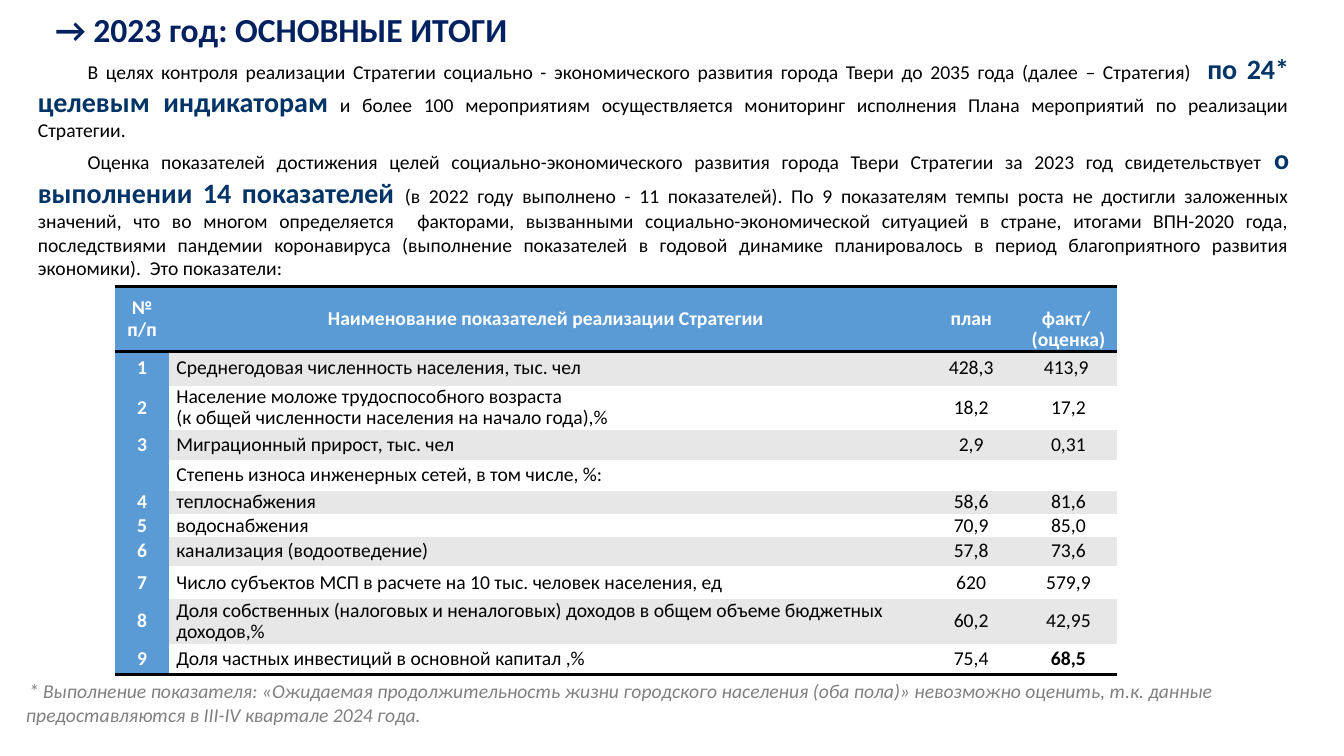
from lxml.etree import SubElement
from pptx import Presentation
from pptx.dml.color import RGBColor
from pptx.enum.text import MSO_ANCHOR, MSO_AUTO_SIZE, PP_ALIGN
from pptx.oxml.ns import qn
from pptx.util import Pt

BLACK = RGBColor(0, 0, 0)
WHITE = RGBColor(255, 255, 255)
NAVY = RGBColor(0x00, 0x20, 0x60)
ACCENT = RGBColor(0x00, 0x33, 0x66)
GRAY = RGBColor(0x80, 0x80, 0x80)
BLUE = RGBColor(0x5B, 0x9B, 0xD5)
BAND = RGBColor(0xE7, 0xE7, 0xE7)

FONT = "Calibri"
NO_STYLE = "{2D5ABB26-0587-4C30-8999-92F81FD0307C}"

TITLE = "→ 2023 год: ОСНОВНЫЕ ИТОГИ"
# Each paragraph alternates plain and highlighted pieces
SUMMARY = [
    ["В целях контроля реализации Стратегии социально - экономического развития города Твери "
     "до 2035 года (далее – Стратегия)  ",
     "по 24* целевым индикаторам",
     " и более 100 мероприятиям осуществляется мониторинг исполнения Плана мероприятий "
     "по реализации Стратегии."],
    ["Оценка показателей достижения целей социально-экономического развития города Твери "
     "Стратегии за 2023 год свидетельствует ",
     "о",
     " ",
     "выполнении 14 показателей ",
     "(в 2022 году выполнено - 11 показателей). По 9 показателям темпы роста не достигли "
     "заложенных значений, что во многом определяется  факторами, вызванными "
     "социально-экономической ситуацией в стране, итогами ВПН-2020 года, последствиями "
     "пандемии коронавируса (выполнение показателей в годовой динамике планировалось в период "
     "благоприятного развития экономики).  Это показатели:"],
]
FOOTNOTE = ("* Выполнение показателя: «Ожидаемая продолжительность жизни городского населения "
            "(оба пола)» невозможно оценить, т.к. данные предоставляются в III-IV квартале 2024 года.")

COL_WIDTHS = [39, 538, 69.5, 69.5]
# Row height, then the four cell texts
ROWS = [
    (46.5, "№ п/п", "Наименование показателей реализации Стратегии", "план", "факт/ \v(оценка)"),
    (24.5, "1", "Среднегодовая численность населения, тыс. чел", "428,3", "413,9 "),
    (31.5, "2", "Население моложе трудоспособного возраста\n"
                "(к общей численности населения на начало года),%", "18,2", "17,2"),
    (21.5, "3", "Миграционный прирост, тыс. чел", "2,9", "0,31"),
    (22, "", "Степень износа инженерных сетей, в том числе, %:", "", ""),
    (17, "4", "теплоснабжения", "58,6", "81,6"),
    (16, "5", "водоснабжения", "70,9", "85,0"),
    (21, "6", "канализация (водоотведение)", "57,8", "73,6"),
    (23.5, "7", "Число субъектов МСП в расчете на 10 тыс. человек населения, ед", "620", "579,9"),
    (32, "8", "Доля собственных (налоговых и неналоговых) доходов в общем объеме бюджетных "
              "доходов,%", "60,2", "42,95"),
    (22, "9", "Доля частных инвестиций в основной капитал ,%", "75,4", "68,5"),
]


def format_run(r, size, color, bold=False, italic=False):
    r.font.name = FONT
    r.font.size = Pt(size)
    r.font.color.rgb = color
    r.font.bold = bold
    r.font.italic = italic


def add_run(p, text, *style, **flags):
    r = p.add_run()
    r.text = text
    format_run(r, *style, **flags)


def add_box(s, left, top, width, height, wrap=True):
    tf = s.shapes.add_textbox(Pt(left), Pt(top), Pt(width), Pt(height)).text_frame
    tf.word_wrap = wrap
    tf.auto_size = MSO_AUTO_SIZE.SHAPE_TO_FIT_TEXT
    return tf


def add_title(s, *box):
    p = add_box(s, *box, wrap=False).paragraphs[0]
    p.alignment = PP_ALIGN.CENTER
    add_run(p, TITLE, 24, NAVY, bold=True)


def add_summary(s, *box):
    tf = add_box(s, *box)
    for i, pieces in enumerate(SUMMARY):
        p = tf.add_paragraph() if i else tf.paragraphs[0]
        p.alignment = PP_ALIGN.JUSTIFY
        p._p.get_or_add_pPr().set("indent", str(Pt(35.5)))
        for j, text in enumerate(pieces):
            if j % 2:
                add_run(p, text, 20, ACCENT, bold=True)
            else:
                add_run(p, text, 14, BLACK)


def add_footnote(s, *box):
    p = add_box(s, *box).paragraphs[0]
    add_run(p, " ", 9, BLACK)
    add_run(p, FOOTNOTE, 14, GRAY, italic=True)


def add_border(cell, side):
    ln = SubElement(cell._tc.get_or_add_tcPr(), qn(f"a:{side}"), w=str(Pt(2)))
    fill = SubElement(ln, qn("a:solidFill"))
    SubElement(fill, qn("a:srgbClr"), val=str(BLACK))


def fill_cell(cell, text, row, col):
    header = row == 0 or col == 0
    last = len(ROWS) - 1
    # Rules above and below the header and under the table
    if row == 0:
        add_border(cell, "lnT")
    if row in (0, last):
        add_border(cell, "lnB")
    cell.fill.solid()
    cell.fill.fore_color.rgb = BLUE if header else BAND if row % 2 else WHITE
    cell.vertical_anchor = MSO_ANCHOR.MIDDLE
    cell.margin_left = cell.margin_right = Pt(5)
    cell.margin_top = Pt(15) if (row, col) == (0, 3) else 0
    cell.margin_bottom = 0
    cell.text_frame.text = text
    bold = header or (row, col) == (last, 3)
    for p in cell.text_frame.paragraphs:
        p.alignment = PP_ALIGN.LEFT if row and col == 1 else PP_ALIGN.CENTER
        p.line_spacing = 0.9
        for r in p.runs:
            format_run(r, 14, WHITE if header else BLACK, bold)


def add_indicators(s, left, top):
    heights = [row[0] for row in ROWS]
    frame = s.shapes.add_table(len(ROWS), len(COL_WIDTHS), Pt(left), Pt(top),
                               Pt(sum(COL_WIDTHS)), Pt(sum(heights)))
    table = frame.table
    table.first_row = table.horz_banding = False
    table._tbl.tblPr.find(qn("a:tableStyleId")).text = NO_STYLE
    for column, width in zip(table.columns, COL_WIDTHS):
        column.width = Pt(width)
    for i, (height, *texts) in enumerate(ROWS):
        table.rows[i].height = Pt(height)
        for j, text in enumerate(texts):
            fill_cell(table.cell(i, j), text, i, j)


def main():
    prs = Presentation()
    prs.slide_width, prs.slide_height = Pt(960), Pt(540)
    s = prs.slides.add_slide(prs.slide_layouts[6])
    add_summary(s, 20, 33, 908, 184)
    add_title(s, 31, 3, 340, 36)
    add_footnote(s, 11.5, 481.5, 941, 41)
    add_indicators(s, 82, 204.5)
    prs.save("out.pptx")


if __name__ == "__main__":
    main()
